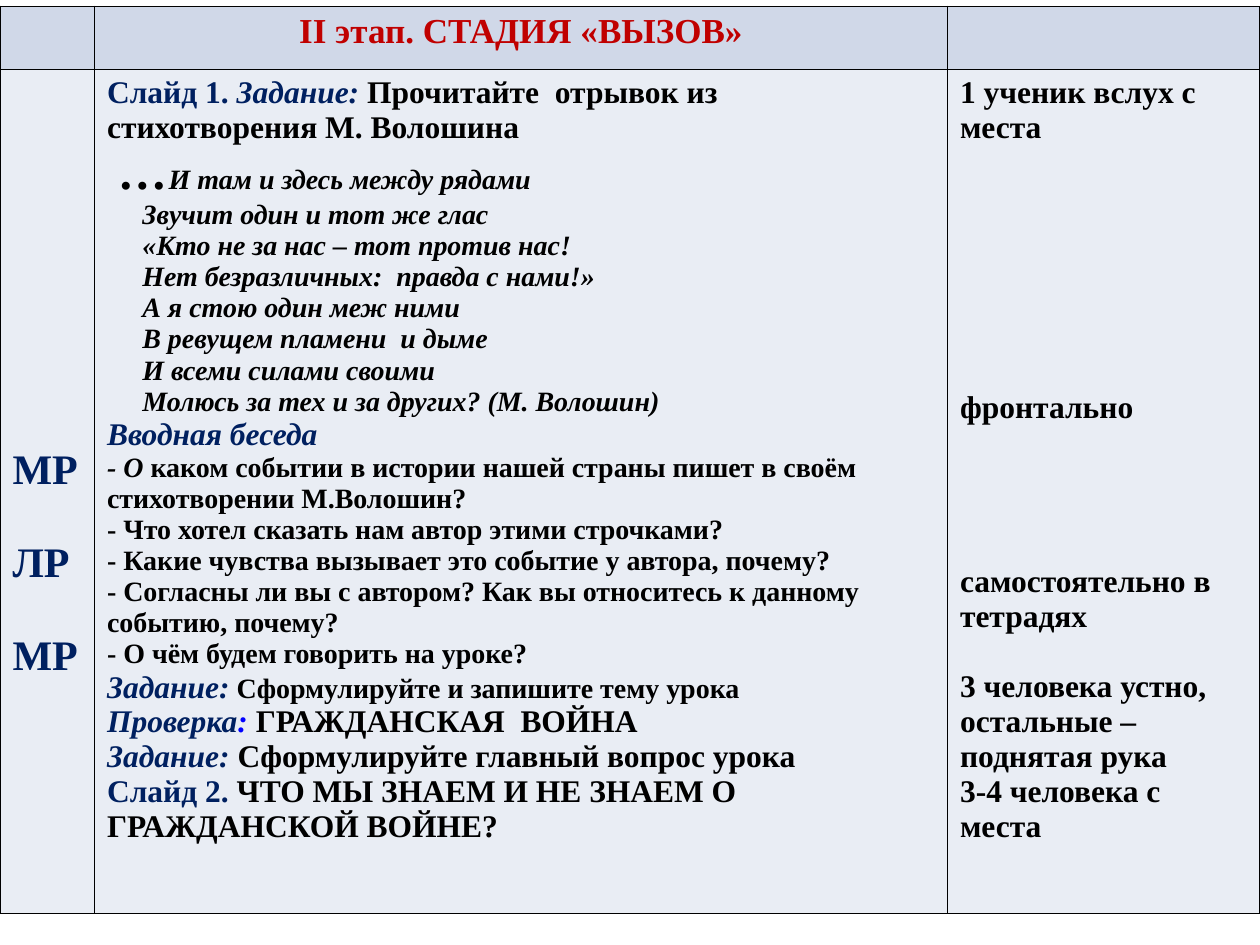
import pptx
import pptx.dml.color
import pptx.enum.text
import pptx.util
from lxml import etree
from pptx.oxml.ns import qn

RGBColor = pptx.dml.color.RGBColor
Inches, Pt = pptx.util.Inches, pptx.util.Pt
ALIGN = pptx.enum.text.PP_ALIGN

BLACK = RGBColor(0x00, 0x00, 0x00)
NAVY = RGBColor(0x00, 0x20, 0x60)
BLUE = RGBColor(0x00, 0x00, 0xFF)
RED = RGBColor(0xC0, 0x00, 0x00)
HEADER_FILL = RGBColor(0xD0, 0xD8, 0xE8)
BODY_FILL = RGBColor(0xE9, 0xED, 0xF4)
FONT = "Times New Roman"

COLUMNS = [0.75, 6.77, 2.48]
ROWS = [0.5, 6.7]
FILLS = [HEADER_FILL, BODY_FILL]
POEM_INDENT = 0.28
LINE = 1.11  # line height as a multiple of the text size

# A run is (text, size, colour, italic).
HEADING = [("II этап. СТАДИЯ «ВЫЗОВ»", 20, RED, False)]
MARKS = ["МР", "ЛР", "МР"]
POEM = [
    "Звучит один и тот же глас",
    "«Кто не за нас – тот против нас!",
    "Нет безразличных:  правда с нами!»",
    "А я стою один меж ними",
    "В ревущем пламени  и дыме",
    "И всеми силами своими",
    "Молюсь за тех и за других? (М. Волошин)",
]
QUESTIONS = [
    "- Что хотел сказать нам автор этими строчками?",
    "- Какие чувства вызывает это событие у автора, почему?",
    "- Согласны ли вы с автором? Как вы относитесь к данному событию, почему?",
    "- О чём будем говорить на уроке?",
]
INTRO = [
    ("Слайд 1.", 18, NAVY, False),
    (" Задание: ", 18, NAVY, True),
    ("Прочитайте  отрывок из стихотворения М. Волошина", 18, BLACK, False),
]
POEM_START = [
    ("…", 28, BLACK, True),
    ("И там и здесь между рядами", 16, BLACK, True),
]
TALK = [
    [("Вводная беседа", 18, NAVY, True)],
    [("- О ", 16, BLACK, True),
     ("каком событии в истории нашей страны пишет в своём "
      "стихотворении М.Волошин?", 16, BLACK, False)],
]
TASKS = [
    [("Задание:", 18, NAVY, True),
     (" ", 16, NAVY, True),
     ("Сформулируйте и запишите тему урока", 16, BLACK, False)],
    [("Проверка", 18, NAVY, True),
     (": ", 18, BLUE, True),
     ("ГРАЖДАНСКАЯ  ВОЙНА", 18, BLACK, False)],
    [("Задание: ", 18, NAVY, True),
     ("Сформулируйте главный вопрос урока", 18, BLACK, False)],
    [("Слайд 2. ", 18, NAVY, False),
     ("ЧТО МЫ ЗНАЕМ И НЕ ЗНАЕМ О ГРАЖДАНСКОЙ ВОЙНЕ?", 18, BLACK, False)],
]
# Way of working, and how many lines of space stand above it.
ACTIVITIES = [
    ("1 ученик вслух с места", 0),
    ("фронтально", 7),
    ("самостоятельно в тетрадях", 4),
    ("3 человека устно, остальные – поднятая рука", 1),
    ("3-4 человека с места", 0),
]


def add_paragraph(cell, runs, indent=0, before=0, align=ALIGN.LEFT):
    frame = cell.text_frame
    para = frame.paragraphs[0]
    if para.runs:
        para = frame.add_paragraph()
    para.alignment = align
    if before:
        para.space_before = Pt(before)
    if indent:
        para._p.get_or_add_pPr().set("marL", str(Inches(indent)))
    for text, size, colour, italic in runs:
        span = para.add_run()
        span.text = text
        span.font.name = FONT
        span.font.size = Pt(size)
        span.font.bold = True
        span.font.italic = italic
        span.font.color.rgb = colour


def format_cell(cell, fill):
    """Give the cell its fill, margins and a black border on every side."""
    cell.margin_left = cell.margin_right = Inches(0.1)
    cell.margin_top = cell.margin_bottom = Inches(0.05)
    properties = cell._tc.get_or_add_tcPr()
    for side in ("a:lnL", "a:lnR", "a:lnT", "a:lnB"):
        line = etree.SubElement(properties, qn(side), w=str(Pt(1)))
        solid = etree.SubElement(line, qn("a:solidFill"))
        etree.SubElement(solid, qn("a:srgbClr"), val=str(BLACK))
    cell.fill.solid()
    cell.fill.fore_color.rgb = fill


def fill_marks(cell):
    cell.margin_top = Inches(3)
    for index, mark in enumerate(MARKS):
        add_paragraph(cell, [(mark, 24, NAVY, False)],
                      before=24 * LINE if index else 0)


def fill_lesson(cell):
    add_paragraph(cell, INTRO)
    add_paragraph(cell, POEM_START, indent=0.1)
    for verse in POEM:
        add_paragraph(cell, [(verse, 16, BLACK, True)], indent=POEM_INDENT)
    questions = [[(question, 16, BLACK, False)] for question in QUESTIONS]
    for runs in TALK + questions + TASKS:
        add_paragraph(cell, runs)


def fill_activities(cell):
    for text, gap in ACTIVITIES:
        add_paragraph(cell, [(text, 18, BLACK, False)], before=gap * 18 * LINE)


def main():
    deck = pptx.Presentation()
    deck.slide_width, deck.slide_height = Inches(10), Inches(7.5)
    slide = deck.slides.add_slide(deck.slide_layouts[6])
    table = slide.shapes.add_table(
        len(ROWS), len(COLUMNS), Inches(0), Inches(0.05),
        Inches(sum(COLUMNS)), Inches(sum(ROWS))).table
    for column, width in zip(table.columns, COLUMNS):
        column.width = Inches(width)
    for row, height, fill in zip(table.rows, ROWS, FILLS):
        row.height = Inches(height)
        for cell in row.cells:
            format_cell(cell, fill)

    add_paragraph(table.cell(0, 1), HEADING, align=ALIGN.CENTER)
    fill_marks(table.cell(1, 0))
    fill_lesson(table.cell(1, 1))
    fill_activities(table.cell(1, 2))
    deck.save("out.pptx")


if __name__ == "__main__":
    main()
